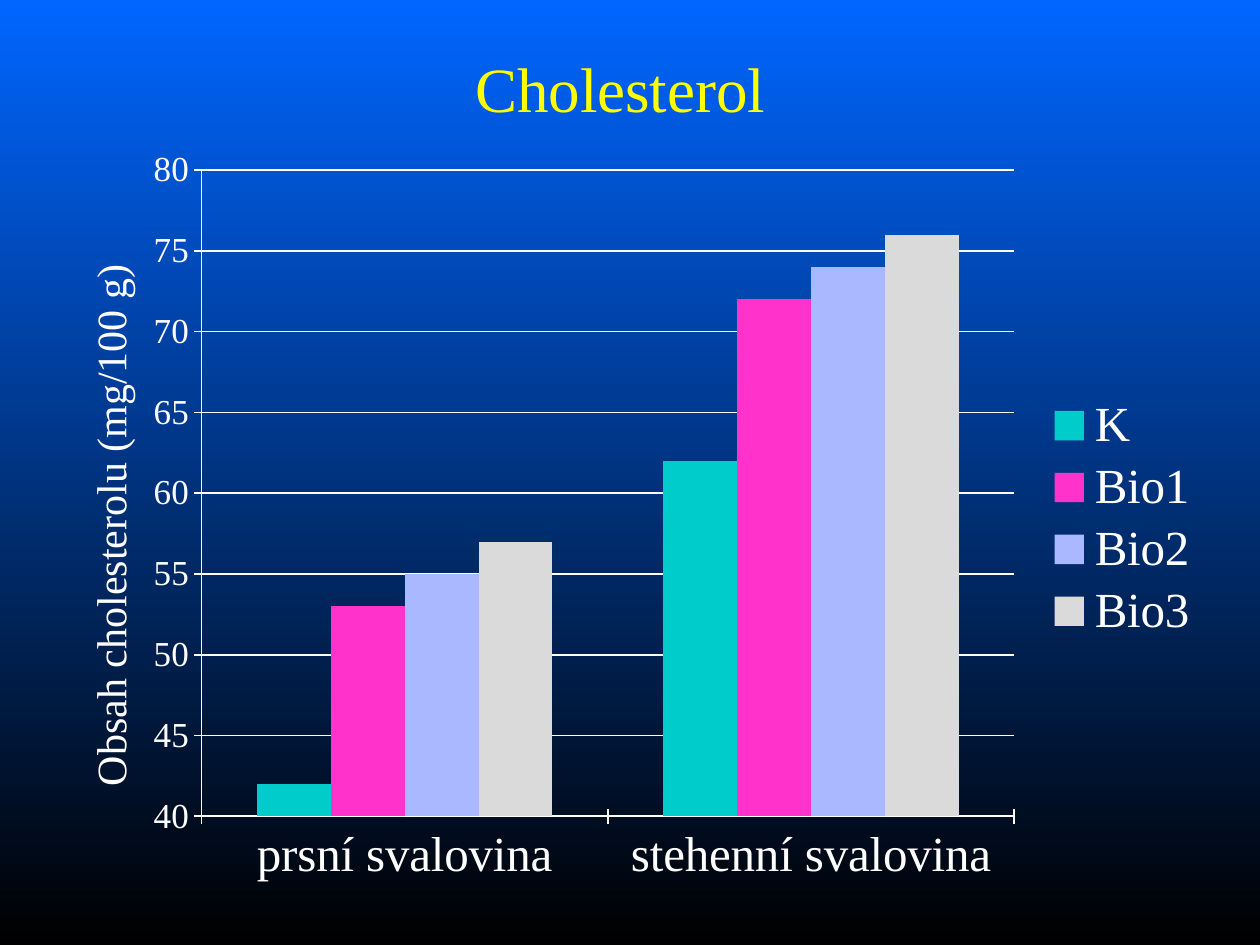
from lxml.etree import SubElement
from pptx import Presentation
from pptx.chart.data import CategoryChartData
from pptx.dml.color import RGBColor
from pptx.enum.chart import XL_CHART_TYPE as ChartType, XL_LEGEND_POSITION as LegendPos
from pptx.enum.chart import XL_TICK_MARK as TickMark
from pptx.enum.text import MSO_ANCHOR as Anchor, PP_ALIGN as Align
from pptx.oxml.ns import qn
from pptx.util import Inches, Pt

FONT = "Times New Roman"
COLORS = {"sky": "0066FF", "night": "000000", "heading": "FFFF00", "chart": "FFFFFF",
          "K": "00CCCC", "Bio1": "FF33CC", "Bio2": "AAB8FF", "Bio3": "DADADA"}
CATEGORIES = ["prsní svalovina", "stehenní svalovina"]
CHOLESTEROL = {"K": (42, 62), "Bio1": (53, 72), "Bio2": (55, 74), "Bio3": (57, 76)}


def rgb(name):
    return RGBColor.from_string(COLORS[name])


def set_attributes(target, values):
    for name, value in values.items():
        setattr(target, name, value)


def style_font(font, size, color="chart"):
    set_attributes(font, {"name": FONT, "size": Pt(size), "bold": False})
    font.color.rgb = rgb(color)


def style_line(line, width=1):
    line.color.rgb = rgb("chart")
    line.width = Pt(width)


def place_part(part, chart_box, part_box, inner=False):
    """Fix a chart part at part_box, given in inches from the chart's corner."""
    for old in part.findall(qn("c:layout")):
        part.remove(old)
    layout = SubElement(part, qn("c:layout"))
    manual = SubElement(layout, qn("c:manualLayout"))
    if inner:
        SubElement(manual, qn("c:layoutTarget")).set("val", "inner")
    for mode in ("xMode", "yMode"):
        SubElement(manual, qn(f"c:{mode}")).set("val", "edge")
    for key, length, whole in zip("xywh", part_box, chart_box[2:] * 2):
        SubElement(manual, qn(f"c:{key}")).set("val", f"{Inches(length) / whole:.4f}")
    leaders = [child for child in part if child.tag in (qn("c:tx"), qn("c:legendPos"))]
    part.insert(len(leaders), layout)


def paint_background(slide):
    fill = slide.background.fill
    fill.gradient()
    fill.gradient_angle = 270
    for stop, name in zip(fill.gradient_stops, ("sky", "night")):
        stop.color.rgb = rgb(name)


def add_heading(slide, box):
    frame = slide.shapes.add_textbox(*box).text_frame
    set_attributes(frame, {"word_wrap": True, "vertical_anchor": Anchor.MIDDLE})
    heading = frame.paragraphs[0]
    heading.alignment = Align.CENTER
    for text, size in (("Cholesterol", 36), (" ", 44)):
        run = heading.add_run()
        run.text = text
        style_font(run.font, size, "heading")


def style_axes(chart, box):
    amounts = chart.value_axis
    set_attributes(amounts, {"minimum_scale": 40, "maximum_scale": 80, "major_unit": 5,
                             "has_major_gridlines": True})
    style_line(amounts.major_gridlines.format.line)
    for axis, size in ((chart.category_axis, 28), (amounts, 20)):
        set_attributes(axis, {"major_tick_mark": TickMark.CROSS,
                              "minor_tick_mark": TickMark.NONE})
        style_line(axis.format.line)
        style_font(axis.tick_labels.font, size)

    title = amounts.axis_title
    run = title.text_frame.paragraphs[0].add_run()
    run.text = "Obsah cholesterolu (mg/100 g)"
    style_font(run.font, 24)
    element = chart.element.xpath(".//c:valAx/c:title")[0]
    body = element.xpath(".//a:bodyPr")[0]
    body.set("rot", "-5400000")
    body.set("vert", "horz")
    place_part(element, box, (0.32, 0.97))


def add_cholesterol_chart(slide, box):
    data = CategoryChartData()
    data.categories = CATEGORIES
    for group, values in CHOLESTEROL.items():
        data.add_series(group, values)
    chart = slide.shapes.add_chart(ChartType.COLUMN_CLUSTERED, *box, data).chart
    set_attributes(chart, {"has_title": False, "has_legend": True})
    style_font(chart.font, 10)

    plot = chart.plots[0]
    set_attributes(plot, {"gap_width": 150, "overlap": 0, "vary_by_categories": False})
    for series in plot.series:
        series.format.fill.solid()
        series.format.fill.fore_color.rgb = rgb(series.name)
        series.format.line.fill.background()
    style_axes(chart, box)

    set_attributes(chart.legend, {"position": LegendPos.RIGHT, "include_in_layout": False})
    style_font(chart.legend.font, 28)
    place_part(chart.element.xpath(".//c:legend")[0], box, (8, 2.03, 1.25, 2.03))
    place_part(chart.element.xpath(".//c:plotArea")[0], box, (1.32, 0.28, 6.45, 5.13), inner=True)


def main():
    deck = Presentation()
    set_attributes(deck, {"slide_width": Inches(10), "slide_height": Inches(7.5)})
    slide = deck.slides.add_slide(deck.slide_layouts[6])
    paint_background(slide)
    add_heading(slide, (Inches(0.75), Inches(0.25), Inches(8.5), Inches(0.8)))
    add_cholesterol_chart(slide, (Inches(0.28), Inches(1.07), Inches(9.37), Inches(6.06)))
    deck.save("out.pptx")


if __name__ == "__main__":
    main()
